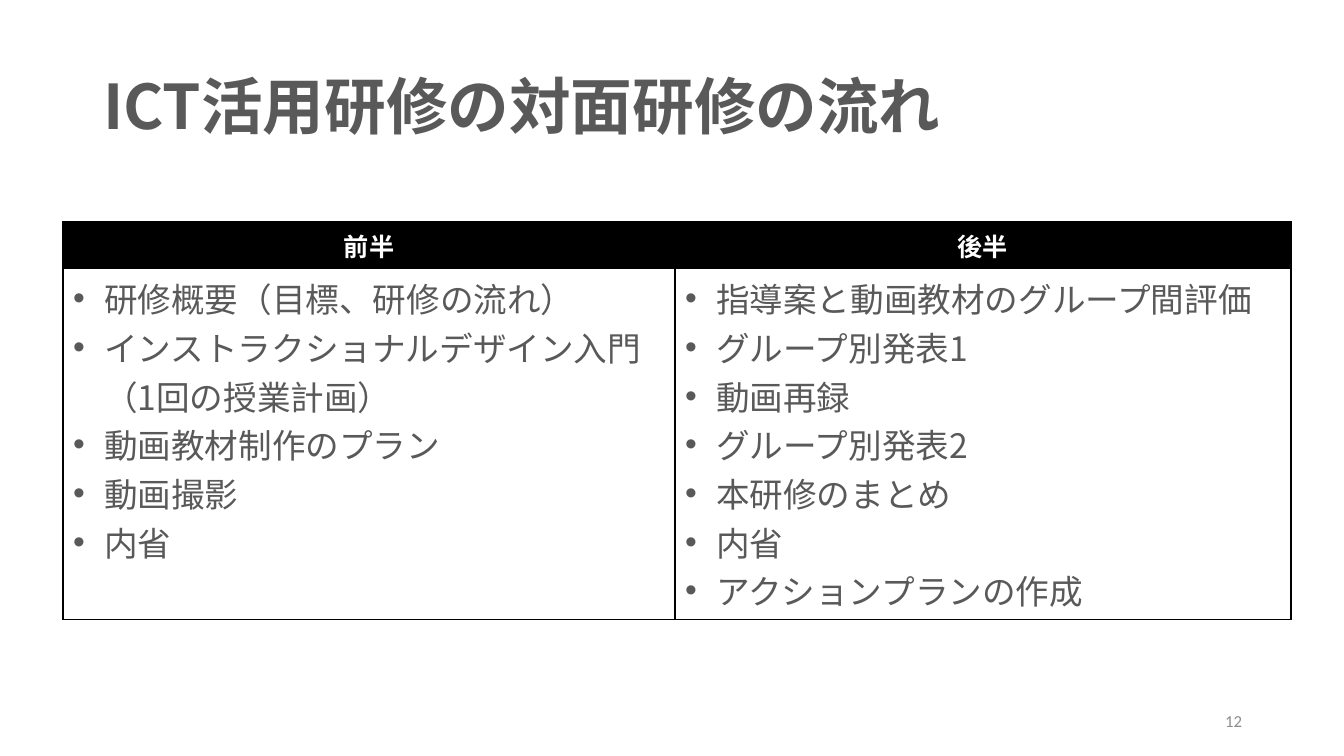
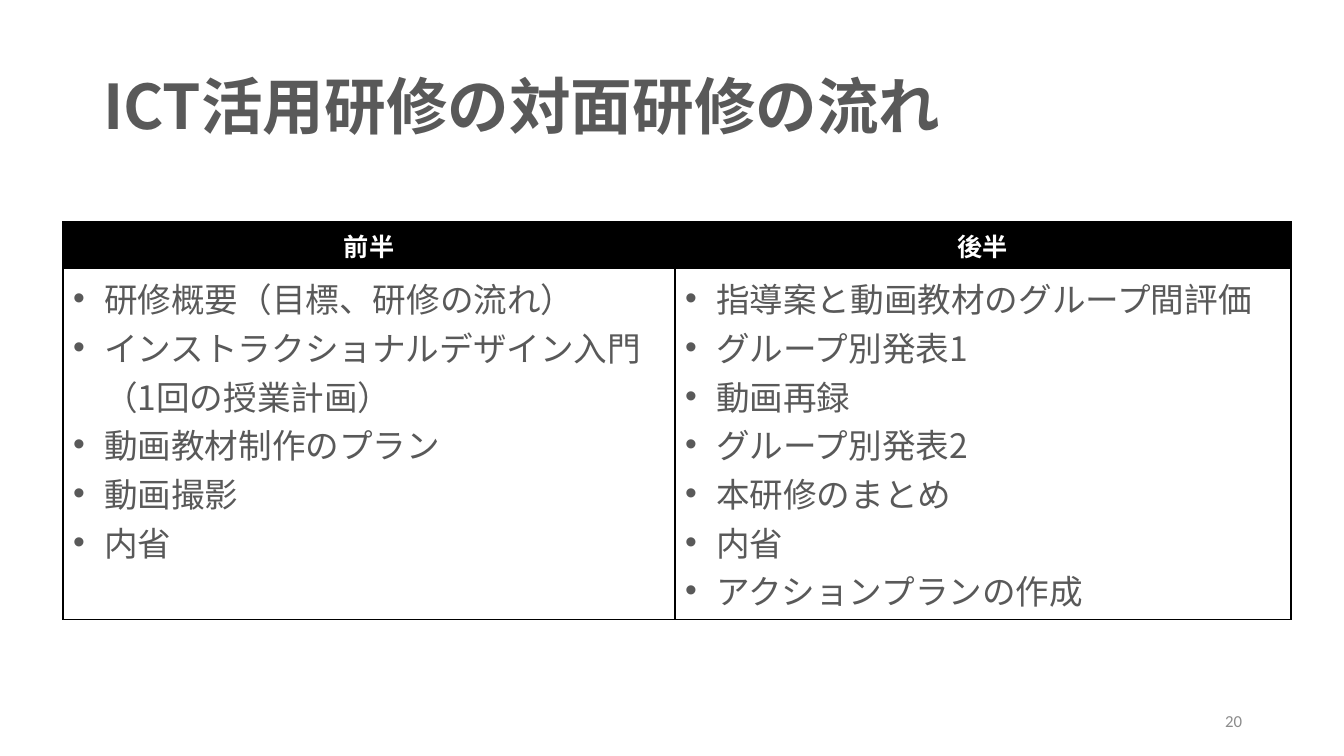
"""Build two slides showing the flow of the face-to-face ICT training."""
from lxml.etree import SubElement
from pptx import Presentation
from pptx.dml.color import RGBColor
from pptx.enum.text import MSO_ANCHOR, MSO_AUTO_SIZE, PP_ALIGN
from pptx.oxml import parse_xml
from pptx.oxml.ns import nsdecls, qn
from pptx.util import Pt

TITLE = "ICT活用研修の対面研修の流れ"
HALVES = [
    ("前半", [
        "研修概要（目標、研修の流れ）",
        "インストラクショナルデザイン入門（1回の授業計画）",
        "動画教材制作のプラン",
        "動画撮影",
        "内省",
    ]),
    ("後半", [
        "指導案と動画教材のグループ間評価",
        "グループ別発表1",
        "動画再録",
        "グループ別発表2",
        "本研修のまとめ",
        "内省",
        "アクションプランの作成",
    ]),
]
PAGE_NUMBERS = [12, 20]

JAPANESE, LATIN = "Noto Sans CJK JP", "Calibri"
BLACK, WHITE, GREY, PALE_GREY = "000000", "FFFFFF", "595959", "8C8C8C"
SLIDE_SIZE = 1344, 756
TITLE_BOX = 93, 60, 1159, 99
TABLE_ORIGIN = 63, 222
COLUMN_WIDTHS = 612, 616
ROW_HEIGHTS = 46, 351
NUMBER_BOX = 950, 701, 302, 40
BULLET_INDENT = 31
EMU_PER_PX = 12192000 / SLIDE_SIZE[0]


def px(length):
    return round(length * EMU_PER_PX)


def rgb(value):
    return RGBColor.from_string(value)


def format_text(paragraph, size, color, bold=False, font=JAPANESE, align=PP_ALIGN.LEFT):
    paragraph.alignment = align
    for run in paragraph.runs:
        run.font.size = Pt(size)
        run.font.bold = bold
        run.font.color.rgb = rgb(color)
        run.font.name = font
        SubElement(run.font._element, qn("a:ea"), typeface=font)


def add_bullet(paragraph):
    properties = paragraph._p.get_or_add_pPr()
    properties.set("marL", str(px(BULLET_INDENT)))
    properties.set("indent", str(-px(BULLET_INDENT)))
    SubElement(properties, qn("a:buFont"), typeface="Arial")
    SubElement(properties, qn("a:buChar"), char="•")


def style_cell(cell, fill):
    cell.fill.solid()
    cell.fill.fore_color.rgb = rgb(fill)
    properties = cell._tc.get_or_add_tcPr()
    for position, side in enumerate(("lnL", "lnR", "lnT", "lnB")):
        properties.insert(position, parse_xml(
            f'<a:{side} {nsdecls("a")} w="{Pt(1)}"><a:solidFill>'
            f'<a:srgbClr val="{BLACK}"/></a:solidFill></a:{side}>'))


def add_title(slide):
    title = slide.shapes.title
    title.left, title.top, title.width, title.height = map(px, TITLE_BOX)
    frame = title.text_frame
    frame.text = TITLE
    frame.auto_size = MSO_AUTO_SIZE.NONE
    frame.vertical_anchor = MSO_ANCHOR.MIDDLE
    frame.paragraphs[0].line_spacing = 0.9
    format_text(frame.paragraphs[0], 44, GREY, bold=True)


def add_flow_table(slide):
    size = sum(COLUMN_WIDTHS), sum(ROW_HEIGHTS)
    table = slide.shapes.add_table(
        len(ROW_HEIGHTS), len(HALVES), *map(px, TABLE_ORIGIN + size)).table
    table.horz_banding = False
    for row, height in zip(table.rows, ROW_HEIGHTS):
        row.height = px(height)
    for index, (heading, activities) in enumerate(HALVES):
        table.columns[index].width = px(COLUMN_WIDTHS[index])
        header, body = table.cell(0, index), table.cell(1, index)
        style_cell(header, BLACK)
        style_cell(body, WHITE)
        header.text_frame.text = heading
        format_text(header.text_frame.paragraphs[0], 18, WHITE, bold=True,
                    align=PP_ALIGN.CENTER)
        body.text_frame.text = "\n".join(activities)
        for paragraph in body.text_frame.paragraphs:
            format_text(paragraph, 24, GREY)
            add_bullet(paragraph)


def add_page_number(slide, number):
    frame = slide.shapes.add_textbox(*map(px, NUMBER_BOX)).text_frame
    frame.word_wrap = True
    frame.vertical_anchor = MSO_ANCHOR.MIDDLE
    frame.text = str(number)
    format_text(frame.paragraphs[0], 12, PALE_GREY, font=LATIN, align=PP_ALIGN.RIGHT)


def main():
    deck = Presentation()
    deck.slide_width, deck.slide_height = map(px, SLIDE_SIZE)
    for number in PAGE_NUMBERS:
        slide = deck.slides.add_slide(deck.slide_layouts.get_by_name("Title Only"))
        add_title(slide)
        add_flow_table(slide)
        add_page_number(slide, number)
    deck.save("out.pptx")


if __name__ == "__main__":
    main()
